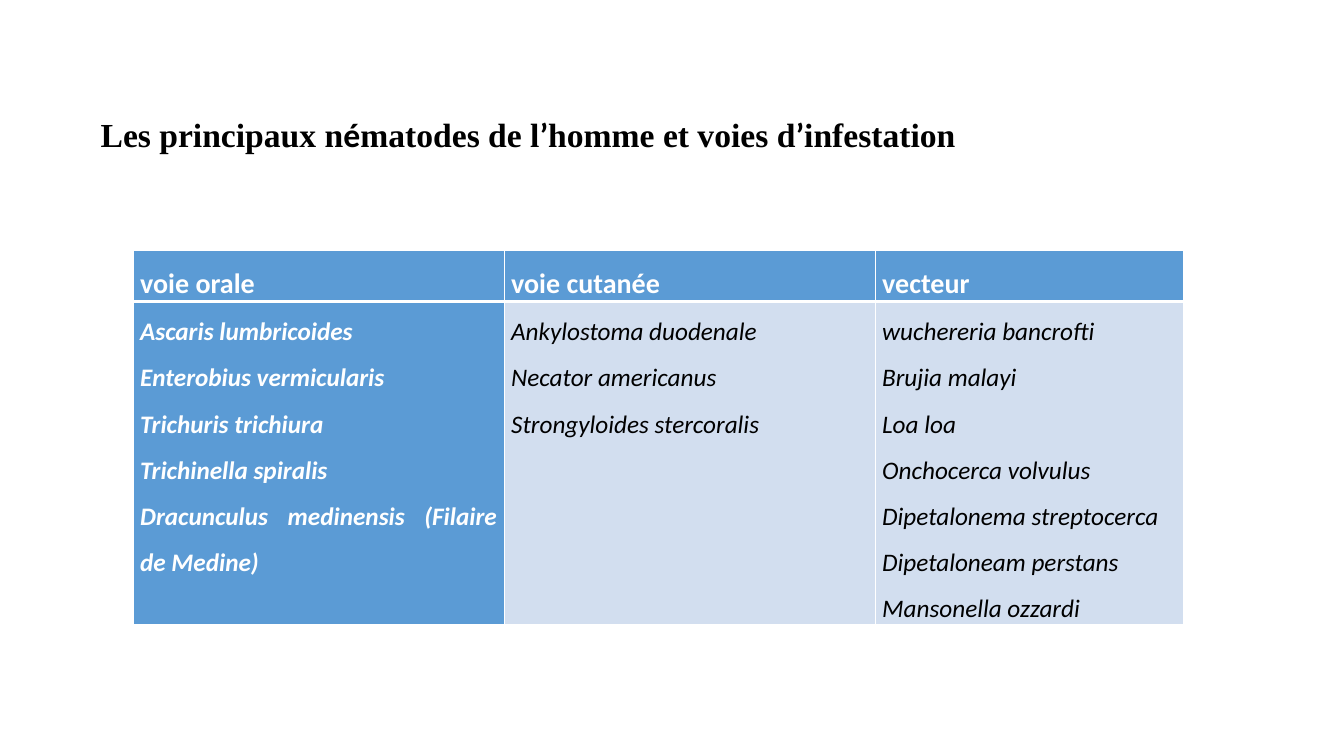
"""Build a slide that sorts human nematodes by route of infestation."""
from lxml import etree
from pptx import Presentation
from pptx import util as u
from pptx.dml.color import RGBColor
from pptx.enum import text
from pptx.oxml import ns

BLACK = RGBColor(0x00, 0x00, 0x00)
WHITE = RGBColor(0xFF, 0xFF, 0xFF)
BLUE = RGBColor(0x5B, 0x9B, 0xD5)
PALE_BLUE = RGBColor(0xD2, 0xDE, 0xEF)

SERIF = "Times New Roman"
SANS = "Calibri"
TITLE = [
    ("Les principaux n", SERIF),
    ("é", SANS),
    ("matodes de l", SERIF),
    ("’", SANS),
    ("homme et voies d", SERIF),
    ("’", SANS),
    ("infestation", SERIF),
]
ROUTES = {
    "voie orale": [
        "Ascaris lumbricoides",
        "Enterobius vermicularis",
        "Trichuris trichiura",
        "Trichinella spiralis",
        "Dracunculus medinensis (Filaire de Medine)",
    ],
    "voie cutanée": [
        "Ankylostoma duodenale",
        "Necator americanus",
        "Strongyloides stercoralis",
    ],
    "vecteur": [
        "wuchereria bancrofti",
        "Brujia malayi",
        "Loa loa",
        "Onchocerca volvulus",
        "Dipetalonema streptocerca",
        "Dipetaloneam perstans",
        "Mansonella ozzardi",
    ],
}
COLUMN_WIDTHS = [3.68, 3.68, 3.06]
ROW_HEIGHTS = [0.5, 3.15]
HEADER_BORDERS = {"lnL": 1, "lnR": 1, "lnT": 1, "lnB": 3}
BODY_BORDERS = {"lnL": 1, "lnR": 1, "lnT": 3, "lnB": 1}
HEADER_FONT = {"name": SANS, "size": u.Pt(20), "bold": True, "italic": False}
BODY_FONT = {"name": SANS, "size": u.Pt(18), "italic": True}


def set_attributes(target, values):
    """Set each named attribute of the target."""
    for name, value in values.items():
        setattr(target, name, value)


def add_run(paragraph, words, color, font_values):
    """Add one formatted run to a paragraph."""
    run = paragraph.add_run()
    run.text = words
    set_attributes(run.font, font_values)
    run.font.color.rgb = color


def add_title(slide):
    """Add the title, whose accented signs use a second font."""
    box = slide.shapes.add_textbox(
        u.Inches(0.9), u.Inches(1.08), u.Inches(9.48), u.Inches(0.81)
    )
    set_attributes(
        box.text_frame,
        {"word_wrap": True, "vertical_anchor": text.MSO_ANCHOR.TOP},
    )
    paragraph = box.text_frame.paragraphs[0]
    for words, font_name in TITLE:
        font_values = {"name": font_name, "size": u.Pt(24), "bold": True}
        add_run(paragraph, words, BLACK, font_values)


def set_borders(cell, widths):
    """Draw white cell borders of the given widths in points."""
    properties = cell._tc.get_or_add_tcPr()
    for side, width in widths.items():
        line = etree.SubElement(
            properties, ns.qn(f"a:{side}"), w=str(u.Pt(width))
        )
        fill = etree.SubElement(line, ns.qn("a:solidFill"))
        etree.SubElement(fill, ns.qn("a:srgbClr"), val=str(WHITE))


def fill_cell(cell, lines, fill_color, text_color, font_values, borders):
    """Write justified lines into a cell and format it."""
    side = u.Inches(0.07)
    set_attributes(
        cell,
        {
            "margin_left": side,
            "margin_right": side,
            "margin_top": 0,
            "margin_bottom": 0,
        },
    )
    set_borders(cell, borders)
    cell.fill.solid()
    cell.fill.fore_color.rgb = fill_color
    frame = cell.text_frame
    for index, words in enumerate(lines):
        paragraph = frame.add_paragraph() if index else frame.paragraphs[0]
        set_attributes(
            paragraph,
            {"alignment": text.PP_ALIGN.JUSTIFY, "line_spacing": 1.5},
        )
        add_run(paragraph, words, text_color, font_values)


def add_routes_table(slide):
    """Add the table with one column per route of infestation."""
    table = slide.shapes.add_table(
        len(ROW_HEIGHTS), len(ROUTES),
        u.Inches(1.32), u.Inches(2.48),
        u.Inches(sum(COLUMN_WIDTHS)), u.Inches(sum(ROW_HEIGHTS)),
    ).table
    set_attributes(table, {"first_col": True, "horz_banding": True})
    for row, height in zip(table.rows, ROW_HEIGHTS):
        row.height = u.Inches(height)
    for index, (route, species) in enumerate(ROUTES.items()):
        table.columns[index].width = u.Inches(COLUMN_WIDTHS[index])
        first = index == 0
        fill_cell(
            table.cell(0, index), [route],
            BLUE, WHITE, HEADER_FONT, HEADER_BORDERS,
        )
        fill_cell(
            table.cell(1, index), species,
            BLUE if first else PALE_BLUE, WHITE if first else BLACK,
            {**BODY_FONT, "bold": first}, BODY_BORDERS,
        )


def main():
    """Create the presentation and save it."""
    presentation = Presentation()
    presentation.slide_width = u.Inches(13.33)
    presentation.slide_height = u.Inches(7.5)
    slide = presentation.slides.add_slide(presentation.slide_layouts[6])
    add_routes_table(slide)
    add_title(slide)
    presentation.save("out.pptx")


if __name__ == "__main__":
    main()
